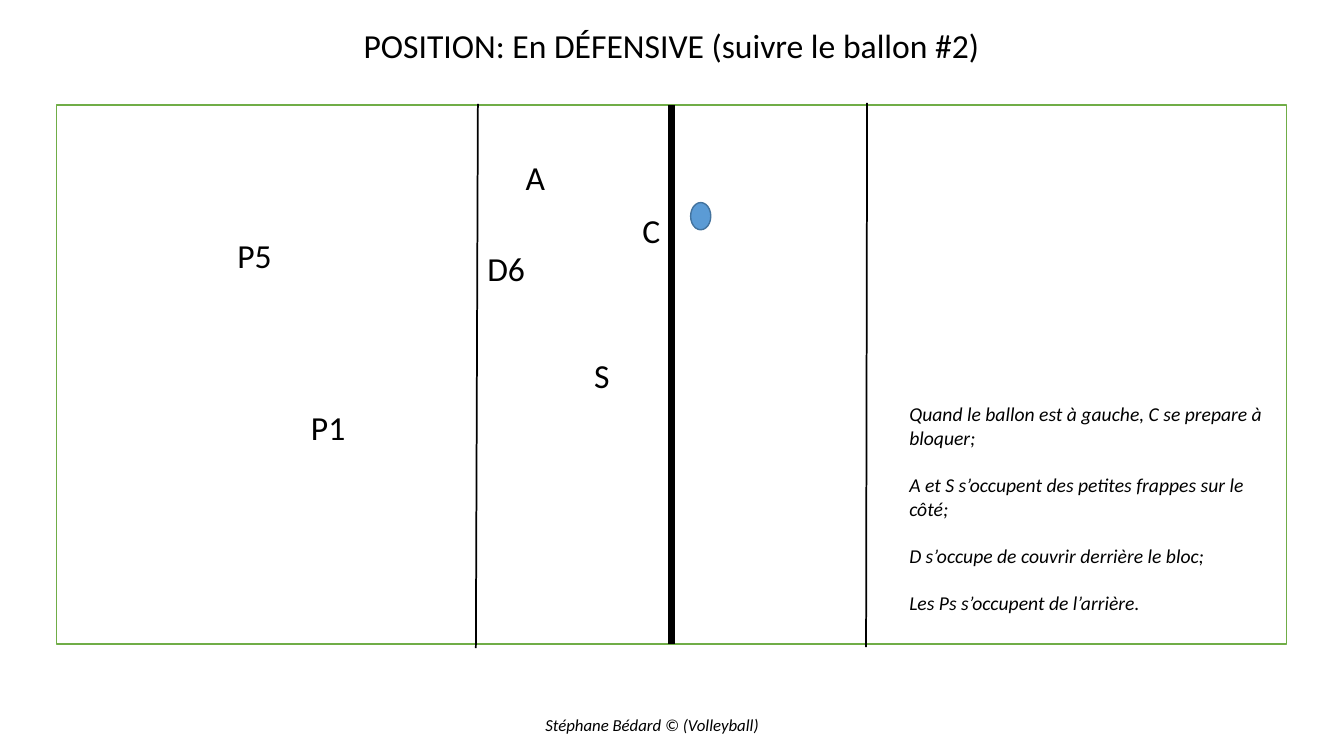
from dataclasses import dataclass

from lxml import etree
from pptx import Presentation
from pptx.dml.color import RGBColor
from pptx.enum.shapes import MSO_CONNECTOR, MSO_SHAPE
from pptx.enum.text import MSO_ANCHOR, MSO_AUTO_SIZE, PP_ALIGN
from pptx.oxml.ns import qn
from pptx.util import Inches, Pt

LEFT, CENTER = PP_ALIGN.LEFT, PP_ALIGN.CENTER
TOP = MSO_ANCHOR.TOP
NO_AUTOFIT, GROW = MSO_AUTO_SIZE.NONE, MSO_AUTO_SIZE.SHAPE_TO_FIT_TEXT
RECTANGLE, OVAL = MSO_SHAPE.RECTANGLE, MSO_SHAPE.OVAL
STRAIGHT = MSO_CONNECTOR.STRAIGHT
TITLE_ONLY = 5


@dataclass(frozen=True)
class Theme:
    font: str = "Calibri"
    ink: str = "000000"
    paper: str = "FFFFFF"
    court_edge: str = "70AD47"
    ball: str = "5B9BD5"
    ball_edge: str = "43739E"
    large: int = 24
    note: int = 14
    credit: int = 12
    note_gap: int = 17
    net: float = 4.5
    attack_line: float = 1.25
    outline: float = 1


def write(frame, paragraphs, theme, size, align=LEFT, italic=False, gap=0, spacing=None):
    """Fill a text frame, with a gap in points between paragraphs."""
    for index, text in enumerate(paragraphs):
        para = frame.add_paragraph() if index else frame.paragraphs[0]
        para.alignment = align
        para.space_before = Pt(gap if index else 0)
        if spacing:
            para.line_spacing = spacing
        span = para.add_run()
        span.text = text
        span.font.name = theme.font
        span.font.size = Pt(size)
        span.font.italic = italic
        span.font.color.rgb = RGBColor.from_string(theme.ink)


class CourtSlide:
    def __init__(self, deck, theme):
        self.theme = theme
        self.slide = deck.slides.add_slide(deck.slide_layouts[TITLE_ONLY])

    def title(self, text, left, top, width, height):
        box = self.slide.shapes.title
        box.left, box.top = Inches(left), Inches(top)
        box.width, box.height = Inches(width), Inches(height)
        frame = box.text_frame
        frame.word_wrap = True
        frame.auto_size = NO_AUTOFIT
        frame.vertical_anchor = TOP
        write(frame, [text], self.theme, self.theme.large, align=CENTER, spacing=0.9)

    def text(self, paragraphs, left, top, width, height, size, wrap=False, **style):
        box = self.slide.shapes.add_textbox(
            Inches(left), Inches(top), Inches(width), Inches(height))
        box.text_frame.word_wrap = wrap
        box.text_frame.auto_size = GROW
        write(box.text_frame, paragraphs, self.theme, size, **style)

    def shape(self, kind, left, top, width, height, fill, edge):
        shape = self.slide.shapes.add_shape(
            kind, Inches(left), Inches(top), Inches(width), Inches(height))
        shape.shadow.inherit = False
        shape.fill.solid()
        shape.fill.fore_color.rgb = RGBColor.from_string(fill)
        shape.line.color.rgb = RGBColor.from_string(edge)
        shape.line.width = Pt(self.theme.outline)

    def line(self, x1, y1, x2, y2, weight):
        line = self.slide.shapes.add_connector(
            STRAIGHT, Inches(x1), Inches(y1), Inches(x2), Inches(y2))
        line.line.color.rgb = RGBColor.from_string(self.theme.ink)
        line.line.width = Pt(weight)
        etree.SubElement(line._element.spPr, qn("a:effectLst"))


PLAYERS = [
    ("C", 6.27, 2.03, 0.38),
    ("A", 5.11, 1.51, 0.40),
    ("S", 5.79, 3.47, 0.36),
    ("D6", 4.73, 2.41, 0.58),
    ("P5", 2.25, 2.28, 0.55),
    ("P1", 2.98, 3.99, 0.55),
]
INSTRUCTIONS = [
    "Quand le ballon est à gauche, C se prepare à bloquer;",
    "A et S s’occupent des petites frappes sur le côté;",
    "D s’occupe de couvrir derrière le bloc;",
    "Les Ps s’occupent de l’arrière.",
]


def main():
    theme = Theme()
    deck = Presentation()
    deck.slide_width, deck.slide_height = Inches(13.33), Inches(7.5)
    page = CourtSlide(deck, theme)

    page.title("POSITION: En DÉFENSIVE (suivre le ballon #2)", 1.66, 0.24, 10, 0.47)
    page.shape(RECTANGLE, 0.56, 1.04, 12.2, 5.35, theme.paper, theme.court_edge)
    page.text(["Stéphane Bédard © (Volleyball)"], 5.31, 7.04, 2.33, 0.3,
              theme.credit, italic=True)

    page.line(6.66, 1.04, 6.66, 6.39, theme.net)
    page.line(4.74, 1.03, 4.72, 6.43, theme.attack_line)
    page.line(8.6, 1.02, 8.59, 6.42, theme.attack_line)

    for player, left, top, width in PLAYERS:
        page.text([player], left, top, width, 0.5, theme.large, align=CENTER)
    page.shape(OVAL, 6.85, 2.01, 0.2, 0.27, theme.ball, theme.ball_edge)

    page.text(INSTRUCTIONS, 8.92, 3.94, 3.86, 2.46, theme.note,
              wrap=True, italic=True, gap=theme.note_gap)
    deck.save("out.pptx")


if __name__ == "__main__":
    main()
